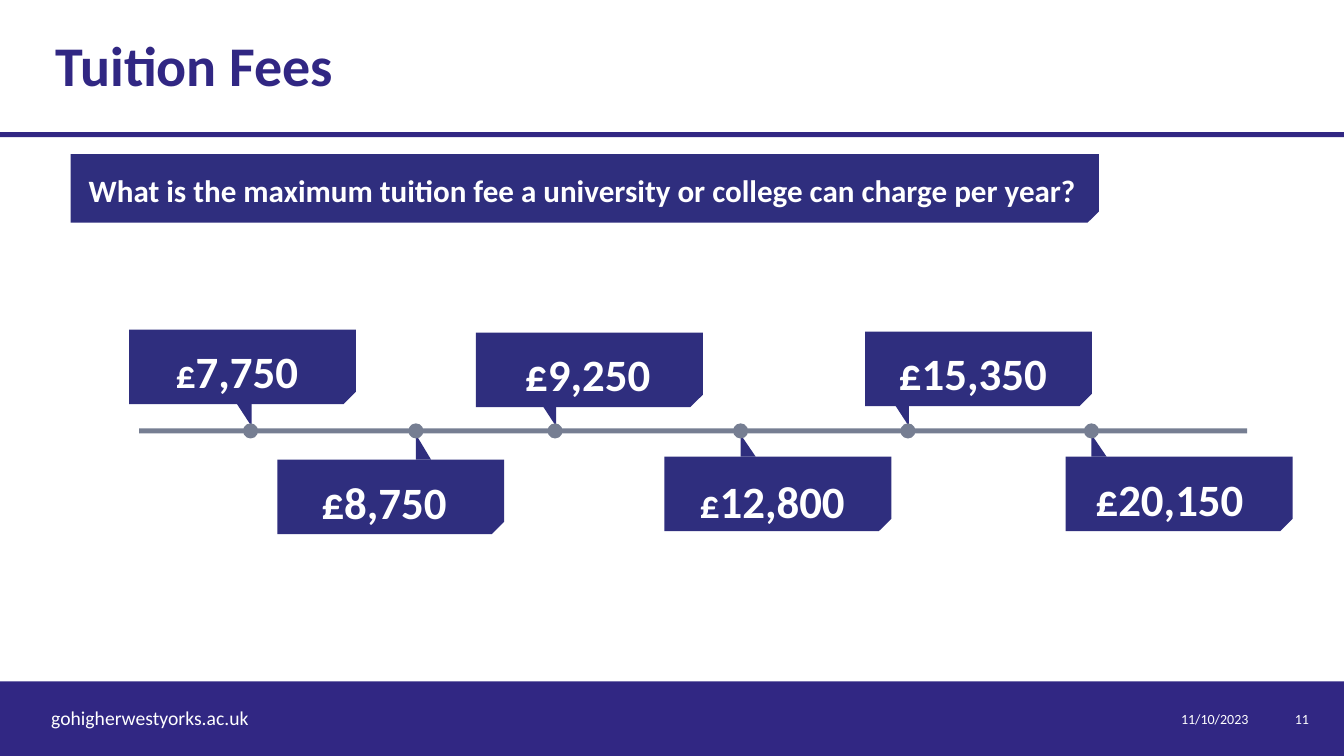
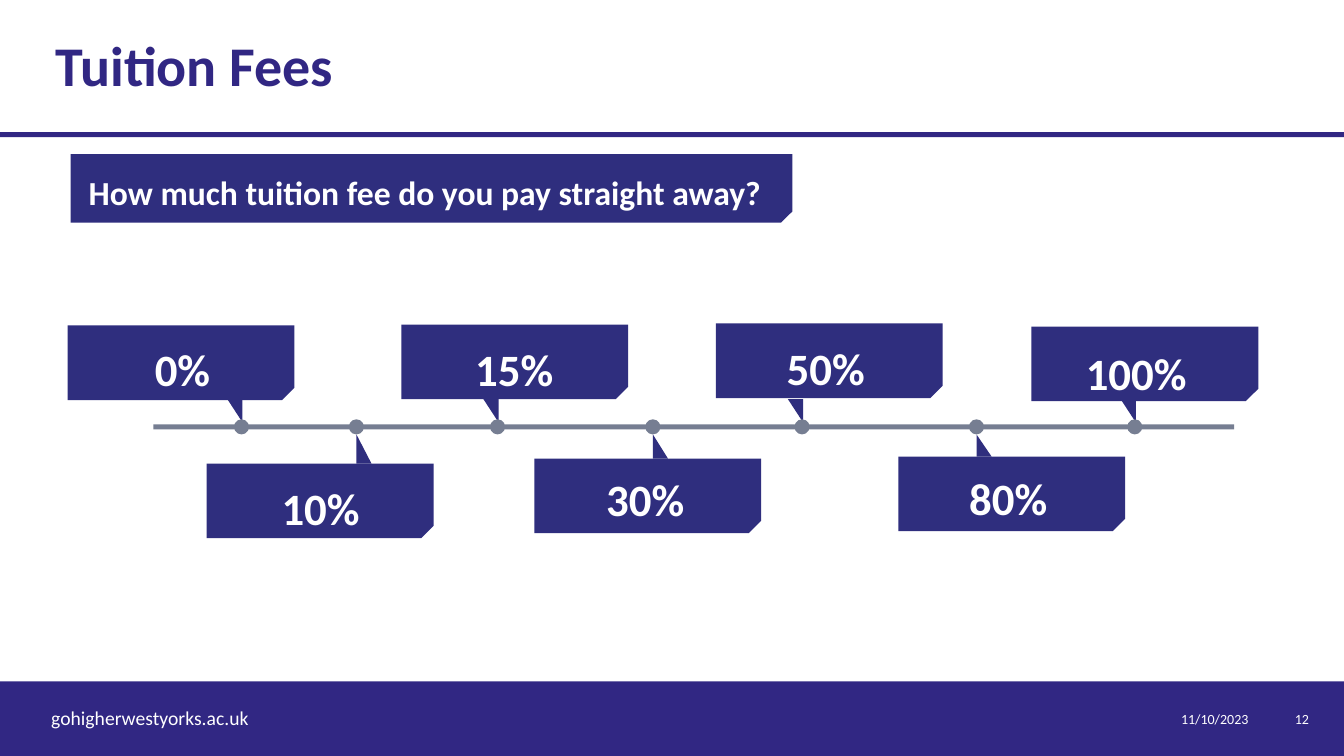
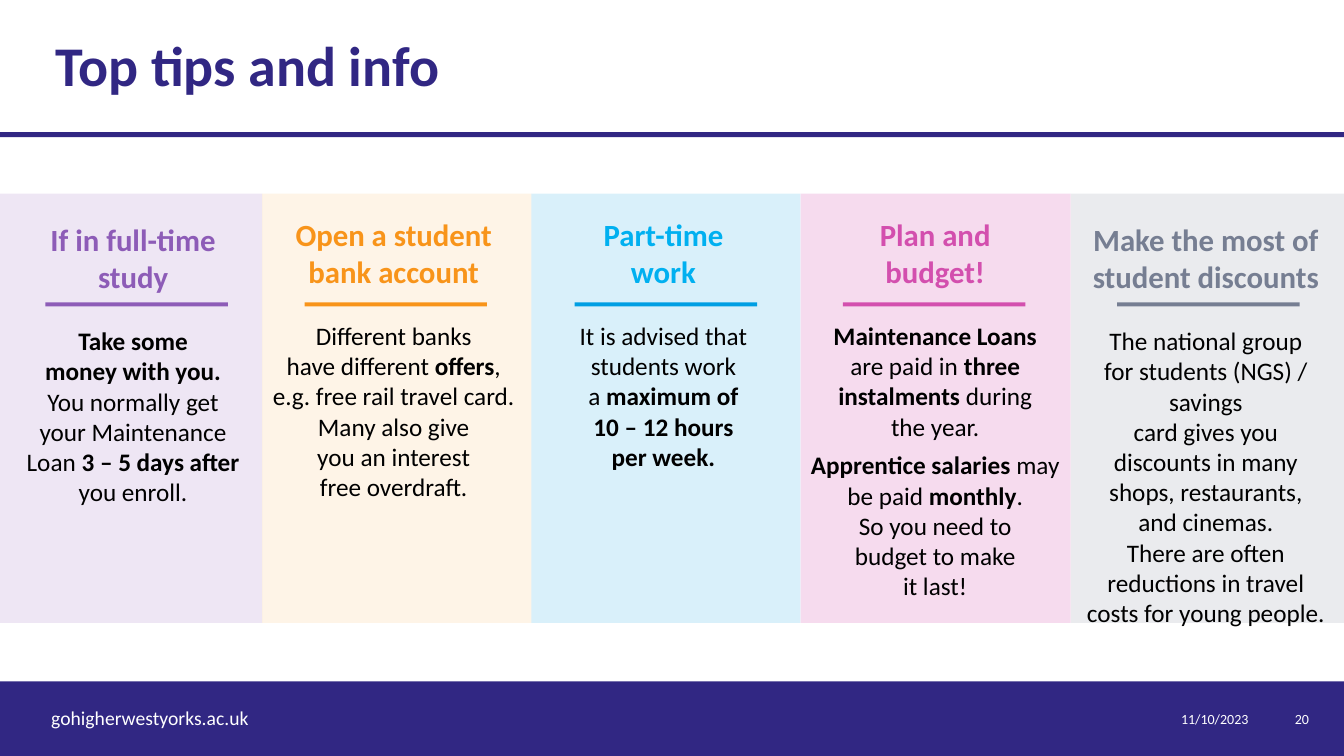
from lxml import etree
from pptx import Presentation
from pptx.dml.color import RGBColor
from pptx.enum.shapes import MSO_SHAPE
from pptx.enum.text import MSO_ANCHOR, MSO_AUTO_SIZE, PP_ALIGN
from pptx.oxml.ns import qn
from pptx.util import Inches, Pt

RECTANGLE = MSO_SHAPE.RECTANGLE
SNIPPED = MSO_SHAPE.SNIP_1_RECTANGLE
TRIANGLE = MSO_SHAPE.RIGHT_TRIANGLE
OVAL = MSO_SHAPE.OVAL
LEFT, CENTER, RIGHT = PP_ALIGN.LEFT, PP_ALIGN.CENTER, PP_ALIGN.RIGHT
MIDDLE = MSO_ANCHOR.MIDDLE
NO_AUTOFIT = MSO_AUTO_SIZE.NONE

FONT = "Calibri"
BRAND, BOX, GREY, WHITE, BLACK = "312783", "2F2E7E", "767E92", "FFFFFF", "000000"
WIDTH, HEIGHT = 13.33, 7.5
FOOTER_TOP, FOOTER_HEIGHT = 6.76, 0.74
CALLOUT_WIDTH, CALLOUT_HEIGHT = 2.25, 0.74
DOT, POINTER, BAR = 0.15, 0.15, 0.05

FEES = [
    ("£7,750", 1.28, 3.27, 2.35, 3.26, 2.41),
    ("£8,750", 2.75, 4.56, 3.81, 4.56, 4.05),
    ("£9,250", 4.72, 3.3, 5.83, 3.29, 5.43),
    ("£12,800", 6.59, 4.53, 7.66, 4.55, 7.27),
    ("£15,350", 8.58, 3.29, 9.65, 3.28, 8.93),
    ("£20,150", 10.57, 4.53, 11.6, 4.53, 10.75),
]
SMALL_POUND = {"£7,750", "£12,800"}
SHARES = [
    ("0%", 0.67, 3.23, 1.81, 3.24, 2.32),
    ("10%", 2.05, 4.6, 3.18, 4.62, 3.46),
    ("15%", 3.98, 3.22, 5.1, 3.24, 4.86),
    ("30%", 5.3, 4.55, 6.4, 4.53, 6.4),
    ("50%", 7.1, 3.21, 8.19, 3.23, 7.88),
    ("80%", 8.91, 4.53, 10, 4.52, 9.61),
    ("100%", 10.23, 3.24, 11.27, 3.28, 11.18),
]
QUIZZES = [
    dict(number="11", question="What is the maximum tuition fee a university or college can charge per year?",
         size=22.2, banner=10.2, axis=(1.38, 10.99), dot_top=4.2, callouts=FEES),
    dict(number="12", question="How much tuition fee do you pay straight away?",
         size=24, banner=7.16, axis=(1.52, 10.72), dot_top=4.16, callouts=SHARES),
]
PANEL_EDGES = [0, 2.6, 5.27, 7.94, 10.62, WIDTH]
TIPS = [
    dict(heading="If in full-time study", color="8D5CB7", opacity=15, rule=0.45, text=(0.04, 2.14, 2.56),
         body=["**Take some\nmoney with you.**", "You normally get\nyour Maintenance",
               "Loan **3 – 5 days after** you enroll."]),
    dict(heading="Open a student\nbank account", color="F8941A", opacity=10, rule=3.02, text=(2.54, 2.09, 2.73),
         body=["Different banks\nhave different **offers**, e.g. free rail travel card. "
               "Many also give\nyou an interest\nfree overdraft."]),
    dict(heading="Part-time\nwork", color="009FE3", heading_color="00B0F0", opacity=15, rule=5.7,
         text=(5.27, 2.09, 2.62),
         body=["It is advised that students work\na **maximum of\n10 – 12 hours\nper week.**"]),
    dict(heading="Plan and\nbudget!", color="D34FAE", opacity=20, rule=8.36, text=(7.92, 2.09, 2.71),
         body=["**Maintenance Loans**\nare paid in **three instalments** during\nthe year.",
               "**Apprentice salaries** may be paid **monthly**.",
               "So you need to\nbudget to make\nit last!"], gaps={1: 6}),
    dict(heading="Make the most of student discounts", color=GREY, opacity=15, rule=11.08, text=(10.66, 2.14, 2.6),
         body=["The national group\nfor students (NGS) / savings\ncard gives you discounts in many shops, restaurants,\n"
               "and cinemas.", "There are often reductions in travel costs for young people."]),
]


def rgb(value):
    return RGBColor.from_string(value)


def place(shape, left, top, width, height):
    shape.left, shape.top, shape.width, shape.height = map(Inches, (left, top, width, height))


def add_block(slide, kind, left, top, width, height, color, opacity=100):
    shape = slide.shapes.add_shape(kind, *map(Inches, (left, top, width, height)))
    shape.shadow.inherit = False
    shape.fill.solid()
    shape.fill.fore_color.rgb = rgb(color)
    shape.line.fill.background()
    if opacity < 100:
        fill = shape._element.spPr.find(qn("a:solidFill"))
        etree.SubElement(fill[0], qn("a:alpha"), val=str(opacity * 1000))
    if kind == SNIPPED:
        shape._element.spPr.find(qn("a:xfrm")).set("flipV", "1")
    return shape


def style(paragraph, size, color, bold=None, align=LEFT, spacing=1.0):
    paragraph.alignment, paragraph.line_spacing = align, spacing
    font = paragraph.font
    font.name, font.size, font.bold = FONT, Pt(size), bold
    font.color.rgb = rgb(color)


def add_text(slide, left, top, width, height):
    box = slide.shapes.add_textbox(*map(Inches, (left, top, width, height)))
    box.text_frame.word_wrap = True
    return box


def add_line(slide, text, left, top, width, height, size, align, spacing=1.0):
    box = add_text(slide, left, top, width, height)
    box.text_frame.vertical_anchor = MIDDLE
    paragraph = box.text_frame.paragraphs[0]
    paragraph.text = text
    style(paragraph, size, WHITE, align=align, spacing=spacing)
    return box


def write_marked(paragraph, text):
    for index, part in enumerate(text.split("**")):
        for line_index, line in enumerate(part.split("\n")):
            if line_index:
                paragraph.add_line_break()
            if line:
                run = paragraph.add_run()
                run.text = line
                if index % 2:
                    run.font.bold = True


def build_master(presentation, slide):
    master = presentation.slide_master
    place(master.placeholders[0], 0.45, 0.4, 10.2, 0.56)
    shared = [
        add_block(slide, RECTANGLE, 0, FOOTER_TOP, WIDTH, FOOTER_HEIGHT, BRAND),
        add_block(slide, RECTANGLE, 0, 1.31, WIDTH, BAR, BRAND),
        add_line(slide, "11/10/2023", 11.51, FOOTER_TOP, 0.97, FOOTER_HEIGHT, 10, RIGHT),
        add_line(slide, "gohigherwestyorks.ac.uk", 0.41, FOOTER_TOP, 2.17, FOOTER_HEIGHT, 14, LEFT, 0.9),
    ]
    for number, shape in enumerate(shared, 101):
        shape._element._nvXxPr.cNvPr.set("id", str(number))
        master.shapes._spTree.append(shape._element)


def start_slide(presentation, layout_index, title, number):
    slide = presentation.slides.add_slide(presentation.slide_layouts[layout_index])
    slide.shapes.title.text_frame.vertical_anchor = MIDDLE
    paragraph = slide.shapes.title.text_frame.paragraphs[0]
    paragraph.text = title
    style(paragraph, 40, BRAND, True, spacing=0.9)
    add_line(slide, number, 12.6, FOOTER_TOP, 0.48, FOOTER_HEIGHT, 10, RIGHT)
    return slide


def add_question(slide, question, size, banner_width):
    add_block(slide, SNIPPED, 0.7, 1.53, banner_width, 0.68, BOX)
    body = slide.placeholders[1]
    slide.shapes._spTree.append(body._element)
    place(body, 0.78, 1.58, 10.53, 0.61)
    body.text_frame.auto_size = NO_AUTOFIT
    paragraph = body.text_frame.paragraphs[0]
    paragraph.text = question
    properties = paragraph._p.get_or_add_pPr()
    properties.set("marL", "0")
    properties.set("indent", "0")
    etree.SubElement(properties, qn("a:buNone"))
    paragraph.space_before = Pt(0)
    style(paragraph, size, WHITE, True, spacing=1.2)


def add_callout(slide, dot_top, label, left, top, text_center, text_top, dot_left):
    add_block(slide, SNIPPED, left, top, CALLOUT_WIDTH, CALLOUT_HEIGHT, BOX)
    dot_center = dot_left + DOT / 2
    if top < dot_top:
        pointer = add_block(slide, TRIANGLE, dot_center + 0.01 - POINTER, dot_top - 0.2, POINTER, 0.23, BOX)
        pointer.rotation = 180
    else:
        add_block(slide, TRIANGLE, dot_center, 4.31, POINTER, top - 4.31, BOX)
    add_block(slide, OVAL, dot_left, dot_top, DOT, DOT, GREY)
    box = add_text(slide, text_center - CALLOUT_WIDTH / 2, text_top, CALLOUT_WIDTH, 0.55)
    frame = box.text_frame
    frame.margin_left = frame.margin_right = Inches(0.07)
    frame.margin_top = frame.margin_bottom = Inches(0.04)
    paragraph = frame.paragraphs[0]
    style(paragraph, 32, WHITE, True, CENTER, 1.2)
    if label in SMALL_POUND:
        pound = paragraph.add_run()
        pound.text, label = label[0], label[1:]
        pound.font.size = Pt(28)
    paragraph.add_run().text = label


def add_tip(slide, tip):
    left, top, width = tip["text"]
    frame = add_text(slide, left, top, width, 4.1).text_frame
    heading = frame.paragraphs[0]
    write_marked(heading, tip["heading"])
    style(heading, 22, tip.get("heading_color", tip["color"]), True, CENTER)
    gaps = {0: 22, **tip.get("gaps", {})}
    for index, text in enumerate(tip["body"]):
        paragraph = frame.add_paragraph()
        write_marked(paragraph, text)
        style(paragraph, 18, BLACK, align=CENTER)
        paragraph.space_before = Pt(gaps.get(index, 0))
    add_block(slide, RECTANGLE, tip["rule"], 3, 1.81, 0.04, tip["color"])


def main():
    presentation = Presentation()
    presentation.slide_width, presentation.slide_height = Inches(WIDTH), Inches(HEIGHT)
    for quiz in QUIZZES:
        slide = start_slide(presentation, 1, "Tuition Fees", quiz["number"])
        if quiz is QUIZZES[0]:
            build_master(presentation, slide)
        add_question(slide, quiz["question"], quiz["size"], quiz["banner"])
        axis_left, axis_width = quiz["axis"]
        axis_top = quiz["dot_top"] + (DOT - BAR) / 2
        add_block(slide, RECTANGLE, axis_left, axis_top, axis_width, BAR, GREY)
        for callout in quiz["callouts"]:
            add_callout(slide, quiz["dot_top"], *callout)

    slide = start_slide(presentation, 5, "Top tips and info", "20")
    for tip, left, right in zip(TIPS, PANEL_EDGES, PANEL_EDGES[1:]):
        add_block(slide, RECTANGLE, left, 1.92, right - left, 4.26, tip["color"], tip["opacity"])
    for tip in TIPS:
        add_tip(slide, tip)
    presentation.save("out.pptx")


if __name__ == "__main__":
    main()
